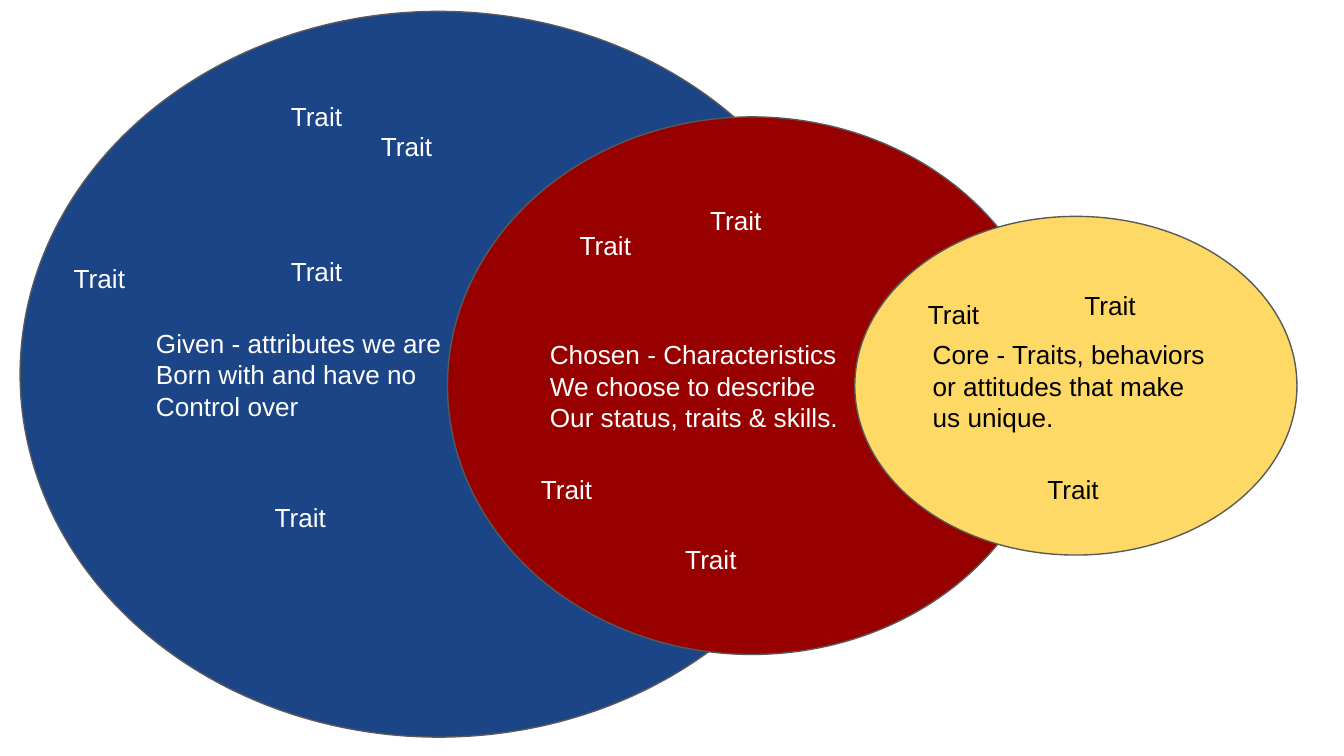
"""Build a slide of three overlapping trait circles: given, chosen and core."""
import pptx
import pptx.dml.color
import pptx.enum.shapes
import pptx.enum.text
import pptx.util

RGB = pptx.dml.color.RGBColor
BLUE = RGB(0x1C, 0x45, 0x87)
RED = RGB(0x98, 0x00, 0x00)
YELLOW = RGB(0xFF, 0xD9, 0x66)
GREY = RGB(0x59, 0x59, 0x59)
WHITE = RGB(0xFF, 0xFF, 0xFF)
BLACK = RGB(0x00, 0x00, 0x00)

PX = 4572
SLIDE = (2000, 1125)
TRAIT = "Trait"
TRAIT_SIZE = (310, 88)
INSET = 20

CIRCLES = [
    {
        "box": (30, 17, 1246, 1080), "fill": BLUE, "color": WHITE,
        "lines": ["Given - attributes we are", "Born with and have no", "Control over"],
        "traits": [(413, 360), (413, 129), (389, 726), (547, 174), (90, 371)],
    },
    {
        "box": (666, 174, 906, 800), "fill": RED, "color": WHITE,
        "lines": ["Chosen - Characteristics", "We choose to describe", "Our status, traits & skills."],
        "traits": [(843, 322), (1037, 284), (1000, 788), (785, 684)],
    },
    {
        "box": (1272, 322, 658, 504), "fill": YELLOW, "color": BLACK,
        "lines": ["Core - Traits, behaviors or attitudes that make us unique."],
        "traits": [(1539, 684), (1594, 410), (1361, 424)],
    },
]


def emu(*lengths):
    return [pptx.util.Emu(n * PX) for n in lengths]


def write(sp, lines, color, anchor):
    tf = sp.text_frame
    tf.word_wrap = True
    tf.vertical_anchor = anchor
    tf.margin_left = tf.margin_top = tf.margin_right = tf.margin_bottom = emu(INSET)[0]
    for i, line in enumerate(lines):
        p = tf.add_paragraph() if i else tf.paragraphs[0]
        p.alignment = pptx.enum.text.PP_ALIGN.LEFT
        r = p.add_run()
        r.text = line
        r.font.name = "Arial"
        r.font.size = pptx.util.Pt(14)
        r.font.color.rgb = color


def add_circle(s, circle):
    sp = s.shapes.add_shape(pptx.enum.shapes.MSO_SHAPE.OVAL, *emu(*circle["box"]))
    sp.shadow.inherit = False
    sp.fill.solid()
    sp.fill.fore_color.rgb = circle["fill"]
    sp.line.color.rgb = GREY
    sp.line.width = pptx.util.Pt(0.75)
    write(sp, circle["lines"], circle["color"], pptx.enum.text.MSO_ANCHOR.MIDDLE)


def add_trait(s, place, color):
    sp = s.shapes.add_textbox(*emu(*place, *TRAIT_SIZE))
    write(sp, [TRAIT], color, pptx.enum.text.MSO_ANCHOR.TOP)
    sp.text_frame.auto_size = pptx.enum.text.MSO_AUTO_SIZE.SHAPE_TO_FIT_TEXT


def main():
    prs = pptx.Presentation()
    prs.slide_width, prs.slide_height = emu(*SLIDE)
    s = prs.slides.add_slide(prs.slide_layouts[6])
    for circle in CIRCLES:
        add_circle(s, circle)
    for circle in CIRCLES:
        for place in circle["traits"]:
            add_trait(s, place, circle["color"])
    prs.save("out.pptx")


if __name__ == "__main__":
    main()
